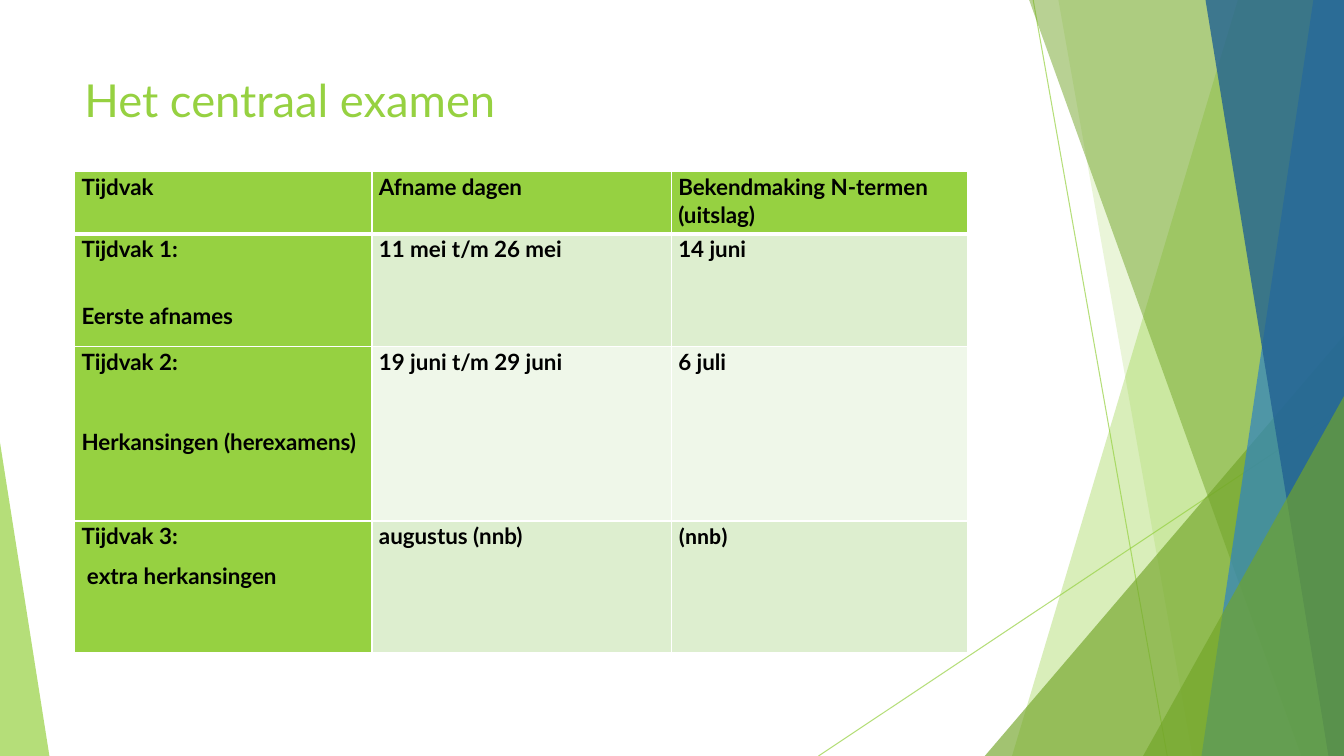
"""Build the slide 'Het centraal examen' with its exam timetable and faceted backdrop."""
import pptx
import pptx.dml.color
import pptx.enum.shapes
import pptx.enum.text
import pptx.oxml
import pptx.oxml.ns
import pptx.util
from lxml import etree

Pt = pptx.util.Pt
WIDTH, HEIGHT = 960, 540
LIME, OLIVE, WHITE, BLACK = "96D141", "72A528", "FFFFFF", "000000"

TITLE = "Het centraal examen"
SCHEDULE = [
    [["Tijdvak"], ["Afname dagen"], ["Bekendmaking N-termen (uitslag)"]],
    [["Tijdvak 1:", "Eerste afnames"], ["11 mei t/m 26 mei"], ["14 juni"]],
    [["Tijdvak 2:", "Herkansingen (herexamens)"], ["19 juni t/m 29 juni"], ["6 juli"]],
    [["Tijdvak 3:", "\u00a0extra herkansingen".replace("\u00a0", " ")], ["augustus (nnb)"], ["(nnb)"]],
]
COLUMN_WIDTHS = [212.4, 213.84, 211.68]
ROW_HEIGHTS = [44.64, 80.64, 124.56, 93.6]
ROW_FILLS = [LIME, "DDEECF", "EFF7E9", "DDEECF"]
LABEL_GAPS = [8, 27.3, 36.6, 8]

RAYS = [((738, 0), (833.76, HEIGHT)), ((WIDTH, 290.16), (584.64, HEIGHT))]
FACETS = [
    ("band", (884.16, 722.88), LIME, 36),
    ("band", (756, 851.76), LIME, 20),
    ("corner", (703.44, 239.76, 256.56, 1), OLIVE, 66),
    ("band", (735.12, 929.52), OLIVE, 50),
    ("band", (938.16, 858.24), "2E83C3", 70),
    ("band", (861.12, 948.96), "226292", 80),
    ("corner", (816.48, 282.96, 143.52, 1), OLIVE, 66),
    ("corner", (0, 316.08, 35.28, 0), LIME, 70),
]


def paint(colour_format, colour, opacity=100):
    """Apply a hex colour and an opacity in percent to a solid fill."""
    colour_format.solid()
    colour_format.fore_color.rgb = pptx.dml.color.RGBColor.from_string(colour)
    if opacity < 100:
        tint = colour_format._xPr.find(".//" + pptx.oxml.ns.qn("a:srgbClr"))
        etree.SubElement(tint, pptx.oxml.ns.qn("a:alpha"), val=str(opacity * 1000))


def add_ray(slide, start, end):
    """Draw one thin backdrop line."""
    ray = slide.shapes.add_connector(
        pptx.enum.shapes.MSO_CONNECTOR.STRAIGHT, *[Pt(v) for v in start + end])
    ray.line.width = Pt(0.75)
    paint(ray.line.fill, LIME, 70)
    etree.SubElement(ray._element.spPr, pptx.oxml.ns.qn("a:effectLst"))


def add_facet(slide, kind, geometry, colour, opacity):
    """Draw one translucent band or corner triangle reaching the slide's edge."""
    if kind == "band":
        top_left, bottom_left = geometry
        outline = slide.shapes.build_freeform(Pt(top_left), 0)
        edge = [(WIDTH, 0), (WIDTH, HEIGHT), (bottom_left, HEIGHT)]
        outline.add_line_segments([(Pt(x), Pt(y)) for x, y in edge], close=True)
        facet = outline.convert_to_shape()
    else:
        left, top, width, apex = geometry
        facet = slide.shapes.add_shape(
            pptx.enum.shapes.MSO_SHAPE.ISOSCELES_TRIANGLE,
            Pt(left), Pt(top), Pt(width), Pt(HEIGHT - top))
        facet.adjustments[0] = apex
    paint(facet.fill, colour, opacity)
    facet.line.fill.background()
    facet.shadow.inherit = False


def style_text(paragraph, size, colour, font="Lato", bold=False):
    """Format every run of a paragraph."""
    for run in paragraph.runs:
        run.font.name, run.font.size, run.font.bold = font, Pt(size), bold
        paint(run.font.fill, colour)


def add_borders(cell, bottom_width):
    """Give a cell white edges."""
    properties = cell._tc.get_or_add_tcPr()
    widths = {"lnL": 1, "lnR": 1, "lnT": 1, "lnB": bottom_width}
    for place, (tag, width) in enumerate(widths.items()):
        edge = etree.Element(pptx.oxml.ns.qn("a:" + tag), w=str(Pt(width)))
        solid = etree.SubElement(edge, pptx.oxml.ns.qn("a:solidFill"))
        etree.SubElement(solid, pptx.oxml.ns.qn("a:srgbClr"), val=WHITE)
        properties.insert(place, edge)


def add_title(slide):
    """Place the slide title."""
    heading = slide.shapes.add_textbox(Pt(53.28), Pt(48.24), Pt(676.8), Pt(50))
    heading.text_frame.word_wrap = True
    heading.text_frame.text = TITLE
    style_text(heading.text_frame.paragraphs[0], 32.4, LIME)


def fill_cell(cell, lines, row, column):
    """Write and format one timetable cell."""
    cell.margin_left = cell.margin_right = Pt(5)
    cell.margin_top = cell.margin_bottom = 0
    cell.vertical_anchor = pptx.enum.text.MSO_ANCHOR.TOP
    cell.text_frame.text = "\n".join(lines)
    for paragraph in cell.text_frame.paragraphs:
        paragraph.line_spacing = 1.07
        paragraph.space_after = Pt(LABEL_GAPS[row])
        style_text(paragraph, 16, BLACK, "Calibri" if lines == ["(nnb)"] else "Lato", True)
    cell.text_frame.paragraphs[-1].space_after = Pt(8)
    paint(cell.fill, LIME if column == 0 else ROW_FILLS[row])
    add_borders(cell, 3 if row == 0 else 1)


def add_schedule(slide):
    """Place the timetable."""
    schedule = slide.shapes.add_table(
        len(ROW_HEIGHTS), len(COLUMN_WIDTHS), Pt(53.28), Pt(122.4),
        Pt(sum(COLUMN_WIDTHS)), Pt(sum(ROW_HEIGHTS))).table
    for column, width in zip(schedule.columns, COLUMN_WIDTHS):
        column.width = Pt(width)
    for row, height in enumerate(ROW_HEIGHTS):
        schedule.rows[row].height = Pt(height)
        for column, lines in enumerate(SCHEDULE[row]):
            fill_cell(schedule.cell(row, column), lines, row, column)


def main():
    """Assemble and save the slide."""
    deck = pptx.Presentation()
    deck.slide_width, deck.slide_height = Pt(WIDTH), Pt(HEIGHT)
    slide = deck.slides.add_slide(deck.slide_layouts[6])
    for start, end in RAYS:
        add_ray(slide, start, end)
    for facet in FACETS:
        add_facet(slide, *facet)
    add_title(slide)
    add_schedule(slide)
    deck.save("out.pptx")


if __name__ == "__main__":
    main()
